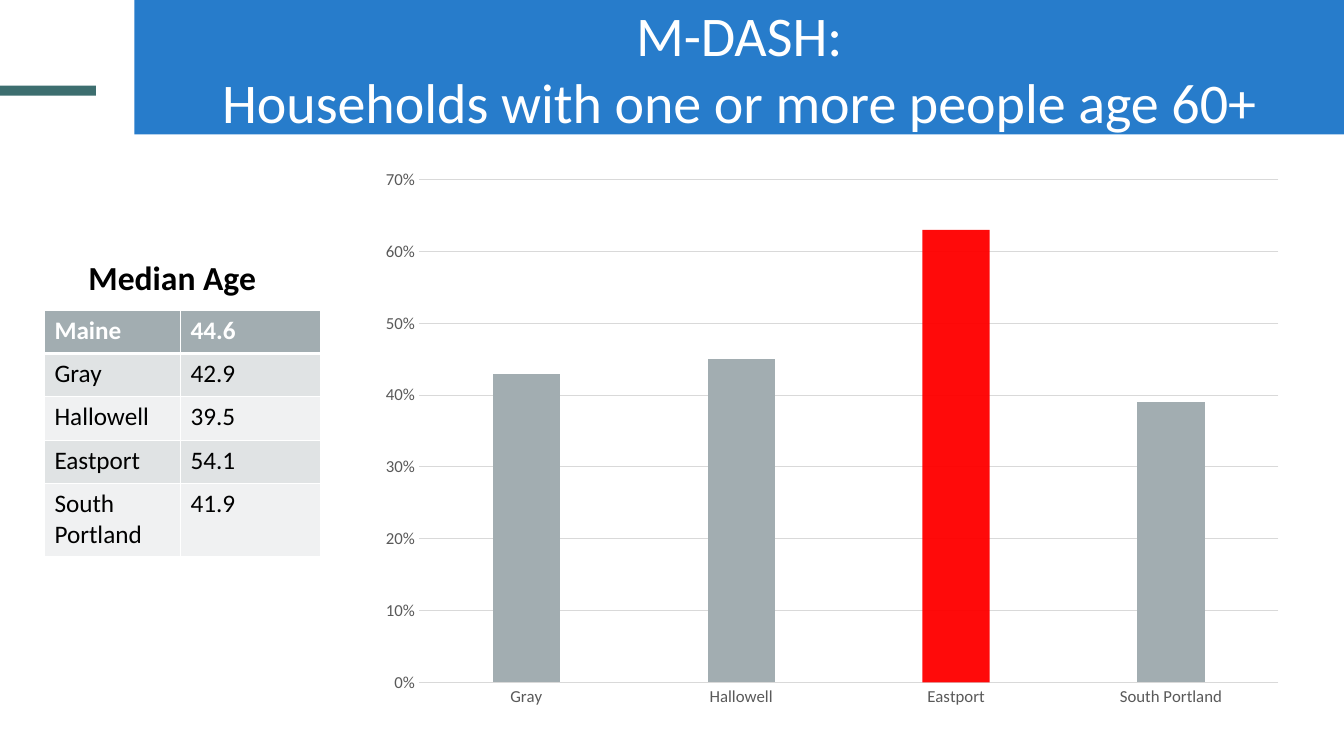
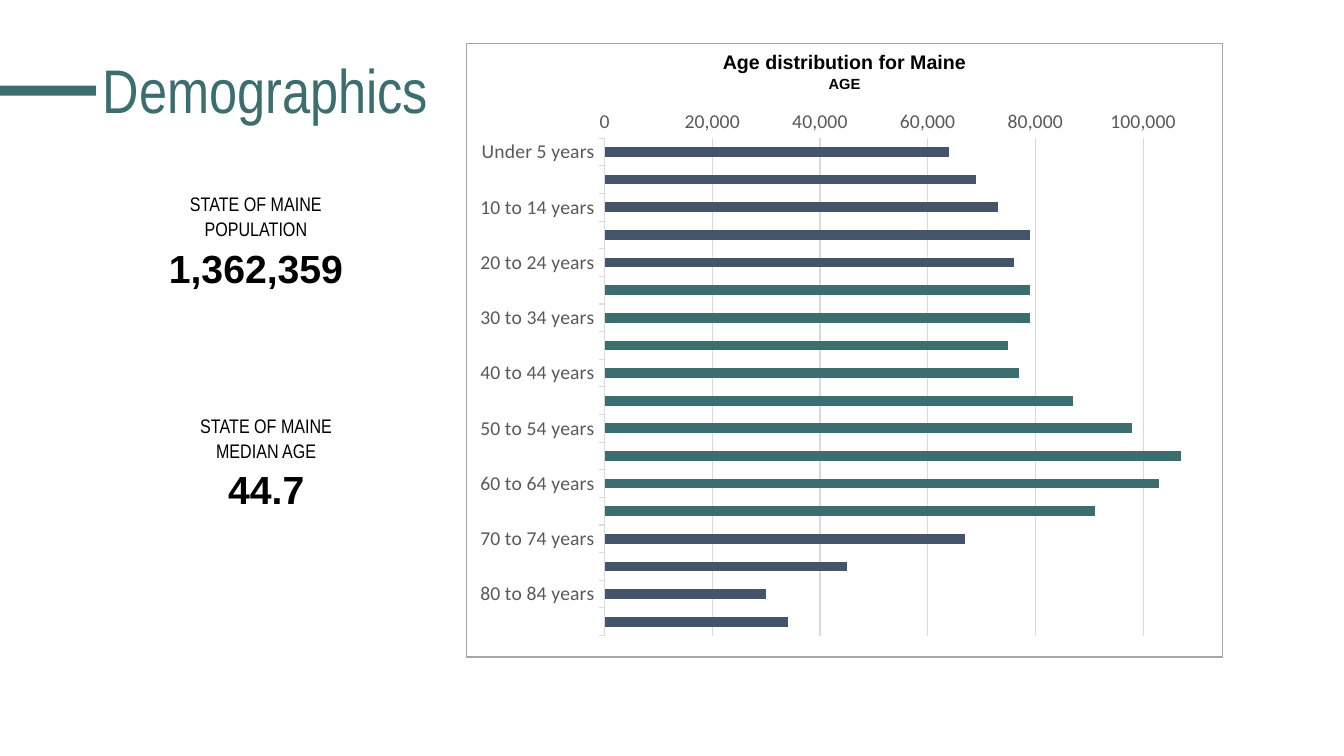
from lxml import etree
from pptx import Presentation
from pptx.chart.data import CategoryChartData
from pptx.dml.color import RGBColor
from pptx.enum.chart import XL_CHART_TYPE, XL_TICK_MARK
from pptx.enum.shapes import MSO_SHAPE
from pptx.enum.text import MSO_ANCHOR, PP_ALIGN
from pptx.oxml import parse_xml
from pptx.oxml.ns import nsdecls, qn
from pptx.util import Cm, Pt

TEAL = RGBColor(0x3D, 0x6E, 0x6F)
BLUE = RGBColor(0x27, 0x7C, 0xCB)
NAVY = RGBColor(0x44, 0x54, 0x6A)
GRAY = RGBColor(0xA2, 0xAD, 0xB1)
RED = RGBColor(0xFF, 0x00, 0x00)
WHITE = RGBColor(0xFF, 0xFF, 0xFF)
BLACK = RGBColor(0x00, 0x00, 0x00)
FRAME_GRAY = RGBColor(0xA6, 0xA6, 0xA6)
GRID_GRAY = RGBColor(0xD9, 0xD9, 0xD9)
LABEL_GRAY = RGBColor(0x59, 0x59, 0x59)
ROW_BANDS = (RGBColor(0xE0, 0xE3, 0xE4), RGBColor(0xF0, 0xF1, 0xF2))

# Text lines: (text, size, font, colour, bold)
HOUSEHOLDS_TITLE = [
    ("M-DASH:", 40, "Calibri", WHITE, False),
    ("Households with one or more people age 60+", 40, "Calibri", WHITE, False),
]
MEDIAN_AGE_HEADING = [("Median Age", 24, "Calibri", BLACK, True)]
MEDIAN_AGES = [
    ("Maine", "44.6"),
    ("Gray", "42.9"),
    ("Hallowell", "39.5"),
    ("Eastport", "54.1"),
    ("South Portland", "41.9"),
]
MEDIAN_AGE_COLUMNS = (3.43, 3.53)
MEDIAN_AGE_ROWS = (1.09, 1.09, 1.09, 1.09, 1.85)
HOUSEHOLDS = {"Gray": 0.43, "Hallowell": 0.45, "Eastport": 0.63, "South Portland": 0.39}

DEMOGRAPHICS_TITLE = [("Demographics", 44, "Arial Narrow", TEAL, False)]
AGE_HEADING = [
    ("Age distribution for Maine", 14, "Arial", BLACK, True),
    ("AGE", 10.5, "Arial", BLACK, True),
]
AGE_DISTRIBUTION = {
    "Under 5 years": 64000,
    "5 to 9 years": 69000,
    "10 to 14 years": 73000,
    "15 to 19 years": 79000,
    "20 to 24 years": 76000,
    "25 to 29 years": 79000,
    "30 to 34 years": 79000,
    "35 to 39 years": 75000,
    "40 to 44 years": 77000,
    "45 to 49 years": 87000,
    "50 to 54 years": 98000,
    "55 to 59 years": 107000,
    "60 to 64 years": 103000,
    "65 to 69 years": 91000,
    "70 to 74 years": 67000,
    "75 to 79 years": 45000,
    "80 to 84 years": 30000,
    "85 years and over": 34000,
}
HIGHLIGHTED_AGES = range(5, 14)
# Left, top, measure, value
STATE_FACTS = [
    (3.07, 4.67, "POPULATION", "1,362,359"),
    (3.33, 10.26, "MEDIAN AGE", "44.7"),
]


def box(left, top, width, height):
    return Cm(left), Cm(top), Cm(width), Cm(height)


def style_font(font, size, name, color, bold=False):
    font.size, font.name, font.bold = Pt(size), name, bold
    font.color.rgb = color


def write_lines(frame, lines, align=PP_ALIGN.LEFT, spacing=1.0, anchor=MSO_ANCHOR.TOP):
    frame.word_wrap = True
    frame.vertical_anchor = anchor
    for index, (text, *style) in enumerate(lines):
        paragraph = frame.add_paragraph() if index else frame.paragraphs[0]
        paragraph.alignment = align
        paragraph.line_spacing = spacing
        run = paragraph.add_run()
        run.text = text
        style_font(run.font, *style)


def add_text(slide, place, lines, **layout):
    write_lines(slide.shapes.add_textbox(*box(*place)).text_frame, lines, **layout)


def add_rectangle(slide, place, fill=None, line=None):
    rectangle = slide.shapes.add_shape(MSO_SHAPE.RECTANGLE, *box(*place))
    rectangle.shadow.inherit = False
    if fill is None:
        rectangle.fill.background()
    else:
        rectangle.fill.solid()
        rectangle.fill.fore_color.rgb = fill
    if line is None:
        rectangle.line.fill.background()
    else:
        rectangle.line.color.rgb = line
        rectangle.line.width = Pt(1)
    return rectangle


def add_accented_slide(deck):
    """Add a blank slide with the teal dash at its left edge."""
    slide = deck.slides.add_slide(deck.slide_layouts[6])
    add_rectangle(slide, (0, 2.16, 2.42, 0.25), TEAL)
    return slide


def place_plot(chart, x, y, w, h):
    """Fix the inner plot area as fractions of the chart."""
    plot_area = chart._chartSpace.chart.plotArea
    for layout in plot_area.findall(qn("c:layout")):
        plot_area.remove(layout)
    sizes = "".join(f'<c:{k} val="{v}"/>' for k, v in zip("xywh", (x, y, w, h)))
    plot_area.insert(0, parse_xml(
        f'<c:layout {nsdecls("c")}><c:manualLayout><c:layoutTarget val="inner"/>'
        f'<c:xMode val="edge"/><c:yMode val="edge"/>{sizes}</c:manualLayout></c:layout>'))


def add_bar_chart(slide, kind, place, name, values, size, gap, top_value, step, number_format):
    data = CategoryChartData()
    data.categories = list(values)
    data.add_series(name, list(values.values()))
    chart = slide.shapes.add_chart(kind, *box(*place), data).chart
    chart.has_title = chart.has_legend = False
    style_font(chart.font, size, "Calibri", BLACK)

    plot = chart.plots[0]
    plot.gap_width = gap
    plot.vary_by_categories = False
    series_fill = plot.series[0].format.fill
    series_fill.solid()
    series_fill.fore_color.rgb = GRAY

    categories, scale = chart.category_axis, chart.value_axis
    for axis in (categories, scale):
        style_font(axis.tick_labels.font, size, "Calibri", LABEL_GRAY)
        axis.major_tick_mark = axis.minor_tick_mark = XL_TICK_MARK.NONE
    scale.minimum_scale, scale.maximum_scale, scale.major_unit = 0, top_value, step
    scale.tick_labels.number_format = number_format
    scale.tick_labels.number_format_is_linked = False
    scale.format.line.fill.background()
    scale.has_major_gridlines = True
    categories.has_major_gridlines = False
    for line in (categories.format.line, scale.major_gridlines.format.line):
        line.color.rgb = GRID_GRAY
        line.width = Pt(0.75)
    return chart


def color_point(chart, index, color):
    point_format = chart.plots[0].series[0].points[index].format
    point_format.fill.solid()
    point_format.fill.fore_color.rgb = color
    return point_format


def set_borders(cell, **widths):
    """Draw white borders; keys are L, R, T and B, in that order."""
    properties = cell._tc.get_or_add_tcPr()
    for index, (side, width) in enumerate(widths.items()):
        properties.insert(index, parse_xml(
            f'<a:ln{side} {nsdecls("a")} w="{Pt(width)}"><a:solidFill>'
            f'<a:srgbClr val="{WHITE}"/></a:solidFill></a:ln{side}>'))


def add_median_age_table(slide):
    place = (1.12, 7.82, sum(MEDIAN_AGE_COLUMNS), sum(MEDIAN_AGE_ROWS))
    table = slide.shapes.add_table(len(MEDIAN_AGES), 2, *box(*place)).table
    for column, width in zip(table.columns, MEDIAN_AGE_COLUMNS):
        column.width = Cm(width)
    for row, (texts, height) in enumerate(zip(MEDIAN_AGES, MEDIAN_AGE_ROWS)):
        table.rows[row].height = Cm(height)
        header = row == 0
        for column, text in enumerate(texts):
            cell = table.cell(row, column)
            cell.fill.solid()
            cell.fill.fore_color.rgb = GRAY if header else ROW_BANDS[(row - 1) % 2]
            color = WHITE if header else BLACK
            write_lines(cell.text_frame, [(text, 18, "Calibri", color, header)])
            set_borders(cell, L=1, R=1, T=3 if row == 1 else 1, B=3 if header else 1)


def build_households(deck):
    slide = add_accented_slide(deck)
    banner = add_rectangle(slide, (3.39, 0, 30.48, 3.39), BLUE)
    write_lines(banner.text_frame, HOUSEHOLDS_TITLE, PP_ALIGN.CENTER, anchor=MSO_ANCHOR.MIDDLE)
    chart = add_bar_chart(
        slide, XL_CHART_TYPE.COLUMN_CLUSTERED, (9.3, 3.84, 23.29, 14.94),
        "Households", HOUSEHOLDS, 12, 219, 0.7, 0.1, "0%")
    chart.plots[0].overlap = -27
    place_plot(chart, 0.054, 0.046, 0.93, 0.848)
    eastport = color_point(chart, list(HOUSEHOLDS).index("Eastport"), RED)
    rgb = eastport._element.find(".//" + qn("a:srgbClr"))
    etree.SubElement(rgb, qn("a:alpha"), val="96000")
    add_median_age_table(slide)
    add_text(slide, (1.98, 6.35, 5.41, 2.31), MEDIAN_AGE_HEADING)


def build_demographics(deck):
    slide = add_accented_slide(deck)
    add_text(slide, (2.34, 0.51, 29.21, 3.68), DEMOGRAPHICS_TITLE,
             spacing=0.9, anchor=MSO_ANCHOR.MIDDLE)
    frame = add_rectangle(slide, (11.76, 1.09, 19.05, 15.47), line=FRAME_GRAY)
    write_lines(frame.text_frame, AGE_HEADING, PP_ALIGN.CENTER, 1.07)
    chart = add_bar_chart(
        slide, XL_CHART_TYPE.BAR_CLUSTERED, (11.76, 2.49, 18.8, 13.79),
        "Population", AGE_DISTRIBUTION, 14, 182, 110000, 20000, "#,##0")
    chart.category_axis.reverse_order = True
    chart.category_axis.major_tick_mark = XL_TICK_MARK.OUTSIDE
    place_plot(chart, 0.185, 0.072, 0.794, 0.909)
    for index in range(len(AGE_DISTRIBUTION)):
        color_point(chart, index, TEAL if index in HIGHLIGHTED_AGES else NAVY)
    for left, top, measure, value in STATE_FACTS:
        lines = [(label, 14, "Arial Narrow", BLACK, False)
                 for label in ("STATE OF MAINE", measure)]
        lines.append((value, 28, "Arial", BLACK, True))
        add_text(slide, (left, top, 6.76, 2.74), lines, align=PP_ALIGN.CENTER, spacing=1.07)


def main():
    deck = Presentation()
    deck.slide_width, deck.slide_height = Cm(33.87), Cm(19.05)
    build_households(deck)
    build_demographics(deck)
    deck.save("out.pptx")


if __name__ == "__main__":
    main()
